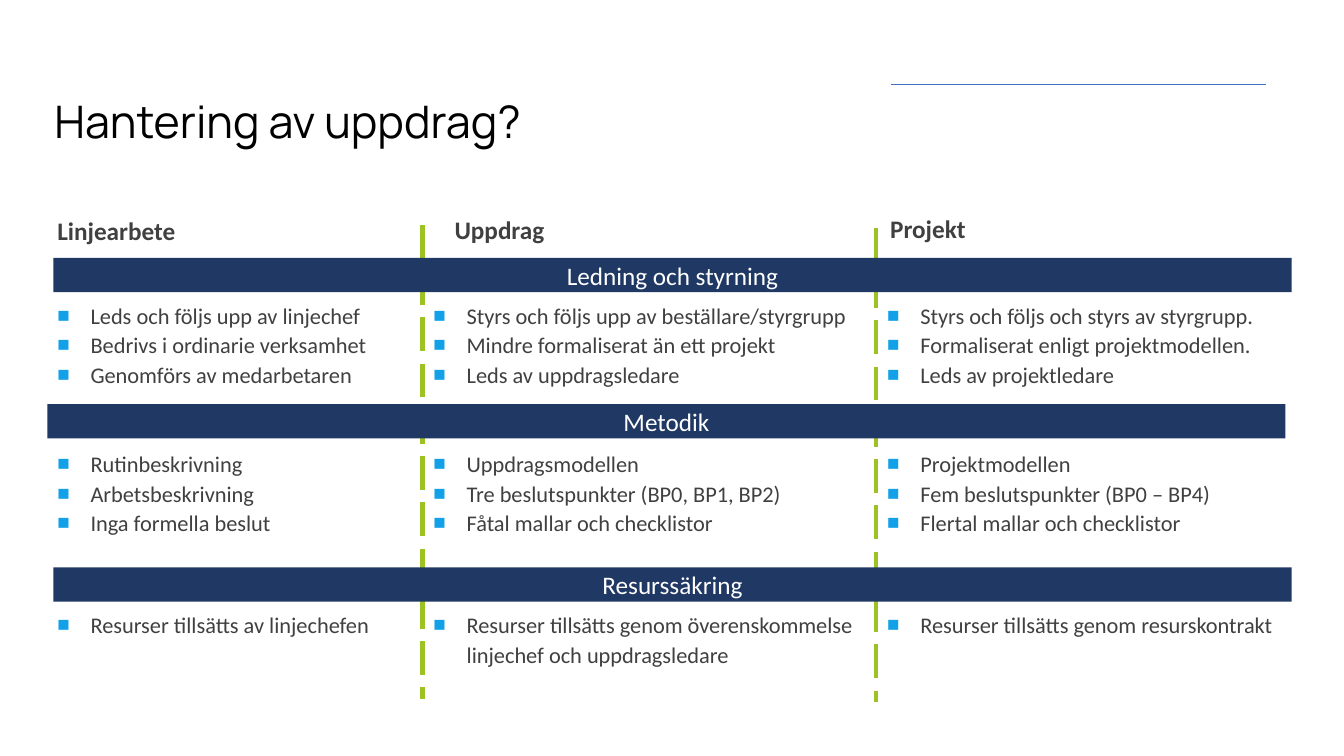
from dataclasses import dataclass

from lxml import etree
from pptx import Presentation
from pptx.dml.color import RGBColor
from pptx.enum.dml import MSO_LINE
from pptx.enum.shapes import MSO_CONNECTOR, MSO_SHAPE
from pptx.enum.text import MSO_ANCHOR, MSO_AUTO_SIZE, PP_ALIGN
from pptx.oxml.ns import qn
from pptx.slide import Slide
from pptx.text.text import TextFrame, _Paragraph
from pptx.util import Inches, Pt

STRAIGHT = MSO_CONNECTOR.STRAIGHT
RECTANGLE = MSO_SHAPE.RECTANGLE
LONG_DASH = MSO_LINE.LONG_DASH
TOP, MIDDLE = MSO_ANCHOR.TOP, MSO_ANCHOR.MIDDLE
LEFT, CENTER = PP_ALIGN.LEFT, PP_ALIGN.CENTER
NO_AUTOFIT = MSO_AUTO_SIZE.NONE

BLACK = RGBColor(0x00, 0x00, 0x00)
WHITE = RGBColor(0xFF, 0xFF, 0xFF)
GREY = RGBColor(0x40, 0x40, 0x40)
NAVY = RGBColor(0x20, 0x38, 0x64)
GREEN = RGBColor(0x9D, 0xC2, 0x23)
BLUE = RGBColor(0x3F, 0x6F, 0xC3)
BULLET_BLUE = RGBColor(0x12, 0xA1, 0xE8)

TITLE_FONT, BODY_FONT = "Manrope", "Calibri"
LIST_INDENT = 0.33
LIST_HEIGHT = 1.0
BAR_WIDTH, BAR_HEIGHT = 12.28, 0.34
DIVIDER_LENGTH = 4.7


@dataclass(frozen=True)
class Column:
    heading: str
    heading_left: float
    heading_top: float
    list_left: float
    list_width: float


@dataclass(frozen=True)
class Section:
    name: str
    bar_left: float
    bar_top: float
    list_top: float
    lists: tuple[tuple[str, ...], ...]


@dataclass(frozen=True)
class Rule:
    start: tuple[float, float]
    end: tuple[float, float]
    color: RGBColor
    weight: float
    dashed: bool


COLUMNS = (
    Column("Linjearbete", 0.47, 2.06, 0.47, 3.83),
    Column("Uppdrag", 4.41, 2.05, 4.2, 4.49),
    Column("Projekt", 8.73, 2.04, 8.7, 4.1),
)

SECTIONS = (
    Section("Ledning och styrning", 0.53, 2.56, 2.92, (
        ("Leds och följs upp av linjechef",
         "Bedrivs i ordinarie verksamhet",
         "Genomförs av medarbetaren"),
        ("Styrs och följs upp av beställare/styrgrupp",
         "Mindre formaliserat än ett projekt",
         "Leds av uppdragsledare"),
        ("Styrs och följs och styrs av styrgrupp.",
         "Formaliserat enligt projektmodellen.",
         "Leds av projektledare"),
    )),
    Section("Metodik", 0.47, 4.01, 4.39, (
        ("Rutinbeskrivning", "Arbetsbeskrivning", "Inga formella beslut"),
        ("Uppdragsmodellen",
         "Tre beslutspunkter (BP0, BP1, BP2)",
         "Fåtal mallar och checklistor"),
        ("Projektmodellen",
         "Fem beslutspunkter (BP0 – BP4)",
         "Flertal mallar och checklistor"),
    )),
    Section("Resurssäkring", 0.53, 5.63, 5.99, (
        ("Resurser tillsätts av linjechefen",),
        ("Resurser tillsätts genom överenskommelse linjechef och uppdragsledare",),
        ("Resurser tillsätts genom resurskontrakt",),
    )),
)

RULES = (
    Rule((4.19, 2.23), (4.19, 2.23 + DIVIDER_LENGTH), GREEN, 3, True),
    Rule((8.69, 2.26), (8.69, 2.26 + DIVIDER_LENGTH), GREEN, 3, True),
    Rule((8.84, 0.84), (12.56, 0.84), BLUE, 0.75, False),
)


def add_span(para: _Paragraph, text: str, size: float, color: RGBColor,
             font: str = BODY_FONT, bold: bool = False) -> None:
    span = para.add_run()
    span.text = text
    span.font.name = font
    span.font.size = Pt(size)
    span.font.bold = bold
    span.font.color.rgb = color


def add_bullet(para: _Paragraph) -> None:
    properties = para._p.get_or_add_pPr()
    indent = Inches(LIST_INDENT)
    properties.set("marL", str(indent))
    properties.set("indent", str(-indent))
    color = etree.SubElement(properties, qn("a:buClr"))
    etree.SubElement(color, qn("a:srgbClr")).set("val", str(BULLET_BLUE))
    etree.SubElement(properties, qn("a:buSzPct")).set("val", "92000")
    etree.SubElement(properties, qn("a:buFont")).set("typeface", "Arial")
    etree.SubElement(properties, qn("a:buChar")).set("char", "■")


def add_text_box(page: Slide, left: float, top: float,
                 width: float, height: float) -> TextFrame:
    box = page.shapes.add_textbox(
        Inches(left), Inches(top), Inches(width), Inches(height))
    frame = box.text_frame
    frame.word_wrap = True
    frame.vertical_anchor = TOP
    return frame


def add_title(page: Slide, text: str) -> None:
    title = page.shapes.title
    title.left, title.top = Inches(0.44), Inches(0.94)
    title.width, title.height = Inches(11.27), Inches(0.74)
    frame = title.text_frame
    frame.vertical_anchor = TOP
    frame.word_wrap = True
    frame.auto_size = NO_AUTOFIT
    para = frame.paragraphs[0]
    para.alignment = LEFT
    para.line_spacing = 0.9
    add_span(para, text, 32, BLACK, TITLE_FONT)


def add_heading(page: Slide, column: Column) -> None:
    frame = add_text_box(page, column.heading_left, column.heading_top, 1.68, 0.42)
    para = frame.paragraphs[0]
    para.line_spacing = 1.1
    para.space_after = Pt(6)
    add_span(para, column.heading, 18, GREY, bold=True)


def add_list(page: Slide, column: Column, top: float, items: tuple[str, ...]) -> None:
    frame = add_text_box(page, column.list_left, top, column.list_width, LIST_HEIGHT)
    for number, item in enumerate(items):
        para = frame.add_paragraph() if number else frame.paragraphs[0]
        para.line_spacing = 1.1
        add_bullet(para)
        add_span(para, item, 16, GREY)


def add_rule(page: Slide, rule: Rule) -> None:
    connector = page.shapes.add_connector(
        STRAIGHT, *(Inches(value) for value in rule.start + rule.end))
    connector.line.color.rgb = rule.color
    connector.line.width = Pt(rule.weight)
    if rule.dashed:
        connector.line.dash_style = LONG_DASH
    etree.SubElement(connector._element.spPr, qn("a:effectLst"))


def add_bar(page: Slide, section: Section) -> None:
    bar = page.shapes.add_shape(
        RECTANGLE, Inches(section.bar_left), Inches(section.bar_top),
        Inches(BAR_WIDTH), Inches(BAR_HEIGHT))
    bar.shadow.inherit = False
    bar.fill.solid()
    bar.fill.fore_color.rgb = NAVY
    bar.line.fill.background()
    bar.text_frame.vertical_anchor = MIDDLE
    para = bar.text_frame.paragraphs[0]
    para.alignment = CENTER
    add_span(para, section.name, 18, WHITE)


def main() -> None:
    deck = Presentation()
    deck.slide_width, deck.slide_height = Inches(13.33), Inches(7.5)
    page = deck.slides.add_slide(deck.slide_layouts.get_by_name("Title Only"))
    add_title(page, "Hantering av uppdrag?")
    for column in COLUMNS:
        add_heading(page, column)
    for section in SECTIONS:
        for column, items in zip(COLUMNS, section.lists):
            add_list(page, column, section.list_top, items)
    for rule in RULES:
        add_rule(page, rule)
    for section in SECTIONS:
        add_bar(page, section)
    deck.save("out.pptx")


if __name__ == "__main__":
    main()
